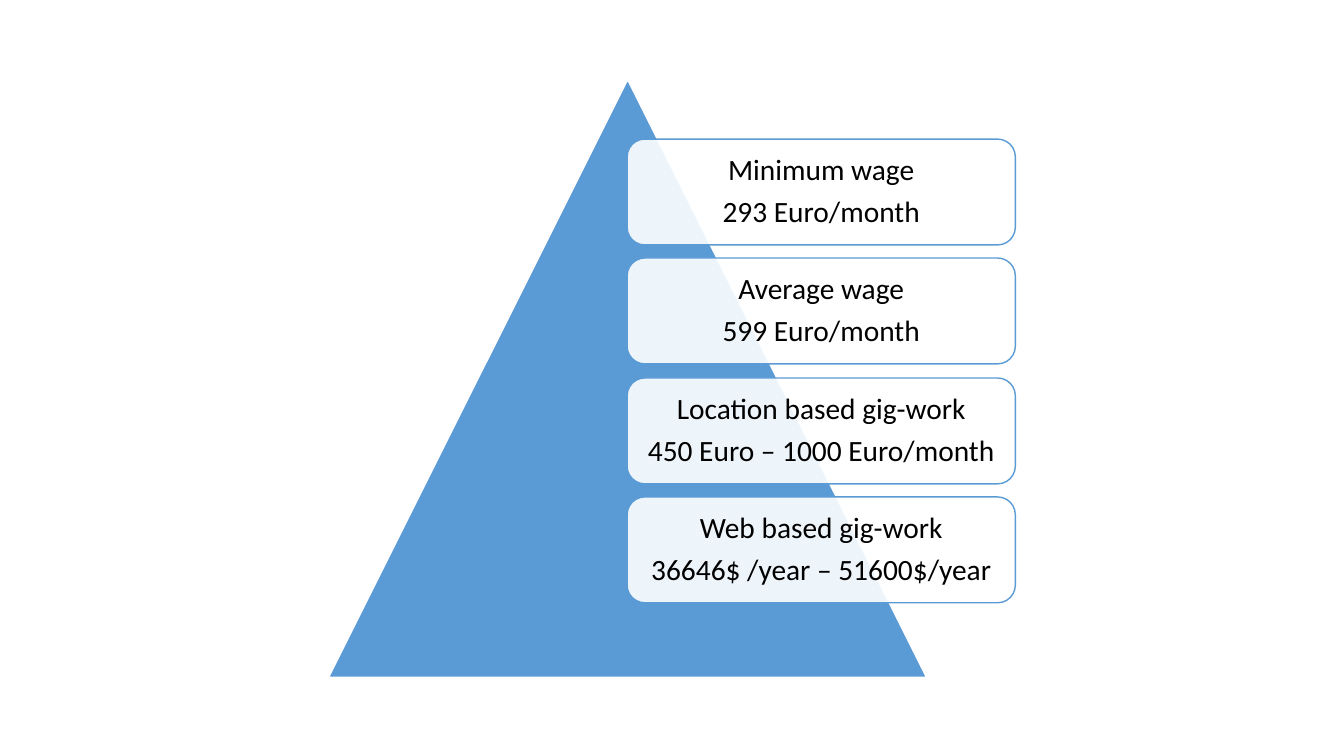
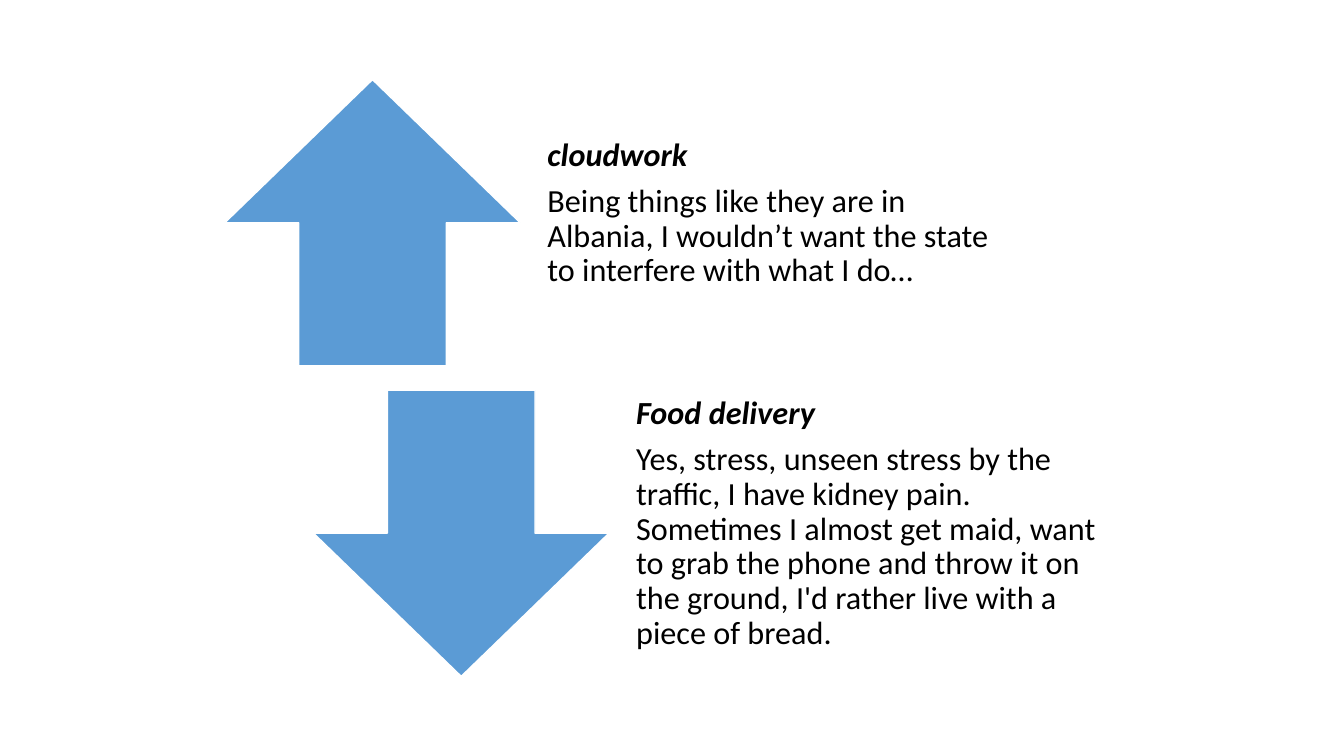
from lxml.etree import SubElement
from pptx import Presentation
from pptx.dml.color import RGBColor
from pptx.enum.shapes import MSO_SHAPE
from pptx.enum.text import MSO_ANCHOR, PP_ALIGN
from pptx.oxml.ns import qn
from pptx.util import Emu, Pt

BLUE = RGBColor(0x5B, 0x9B, 0xD5)
WHITE = RGBColor(0xFF, 0xFF, 0xFF)
BLACK = RGBColor(0x00, 0x00, 0x00)
EMU_PER_PX = 9144


def px(length):
    return Emu(length * EMU_PER_PX)


class Deck:
    font = "Calibri"
    line_spacing = 0.9
    space_after = 0.35

    def __init__(self, width, height):
        self.presentation = Presentation()
        self.presentation.slide_width = px(width)
        self.presentation.slide_height = px(height)
        self.slide = None

    def add_slide(self):
        self.slide = self.presentation.slides.add_slide(self.presentation.slide_layouts[6])

    def shape(self, preset, box, fill=BLUE, outline=WHITE, opacity=100):
        shape = self.slide.shapes.add_shape(preset, *map(px, box))
        shape.shadow.inherit = False
        shape.fill.solid()
        shape.fill.fore_color.rgb = fill
        if opacity < 100:
            solid_fill = shape.element.spPr.find(qn("a:solidFill"))
            SubElement(solid_fill[0], qn("a:alpha")).set("val", str(opacity * 1000))
        shape.line.color.rgb = outline
        shape.line.width = Pt(1)
        return shape

    def text(self, frame, lines, size, insets, align, bold_heading=False):
        frame.word_wrap = True
        frame.vertical_anchor = MSO_ANCHOR.MIDDLE
        frame.margin_left, frame.margin_top, frame.margin_right, frame.margin_bottom = map(px, insets)
        for index, line in enumerate(lines):
            paragraph = frame.add_paragraph() if index else frame.paragraphs[0]
            paragraph.alignment = align
            paragraph.line_spacing = self.line_spacing
            paragraph.space_after = Pt(size * self.space_after)
            run = paragraph.add_run()
            run.text = line
            run.font.name = self.font
            run.font.size = Pt(size)
            run.font.color.rgb = BLACK
            run.font.bold = run.font.italic = bold_heading and index == 0

    def card(self, box, lines):
        card = self.shape(MSO_SHAPE.ROUNDED_RECTANGLE, box, WHITE, BLUE, opacity=90)
        self.text(card.text_frame, lines, 21, (9, 9, 9, 9), PP_ALIGN.CENTER)

    def quote(self, box, lines):
        quote = self.slide.shapes.add_textbox(*map(px, box))
        self.text(quote.text_frame, lines, 23, (18, 0, 18, 18), PP_ALIGN.LEFT, bold_heading=True)

    def save(self):
        self.presentation.save("out.pptx")


WAGES = [
    ("Minimum wage", "293 Euro/month"),
    ("Average wage", "599 Euro/month"),
    ("Location based gig-work", "450 Euro – 1000 Euro/month"),
    ("Web based gig-work", "36646$ /year – 51600$/year"),
]
VOICES = [
    (MSO_SHAPE.UP_ARROW, "cloudwork",
     "Being things like they are in Albania, I wouldn’t want the state "
     "to interfere with what I do…"),
    (MSO_SHAPE.DOWN_ARROW, "Food delivery",
     "Yes, stress, unseen stress by the traffic, I have kidney pain. "
     "Sometimes I almost get maid, want to grab the phone and throw it on "
     "the ground, I'd rather live with a piece of bread."),
]


def wage_pyramid(deck):
    deck.add_slide()
    pyramid_left, pyramid_top, pyramid_size = 326, 79, 593
    deck.shape(MSO_SHAPE.ISOSCELES_TRIANGLE,
               (pyramid_left, pyramid_top, pyramid_size, pyramid_size))
    first_top, last_top = 138, 493
    for index, wage in enumerate(WAGES):
        top = first_top + round(index * (last_top - first_top) / (len(WAGES) - 1))
        deck.card((622, top, 385, 105), wage)


def worker_voices(deck):
    deck.add_slide()
    arrow_width, height, gap = 293, 284, 9
    for index, (arrow, job, words) in enumerate(VOICES):
        left, top = 223 + index * 88, 79 + index * 308
        deck.shape(arrow, (left, top, arrow_width, height))
        deck.quote((left + arrow_width + gap, top, 498, height), (job, words))


def main():
    deck = Deck(1333, 750)
    wage_pyramid(deck)
    worker_voices(deck)
    deck.save()


if __name__ == "__main__":
    main()
